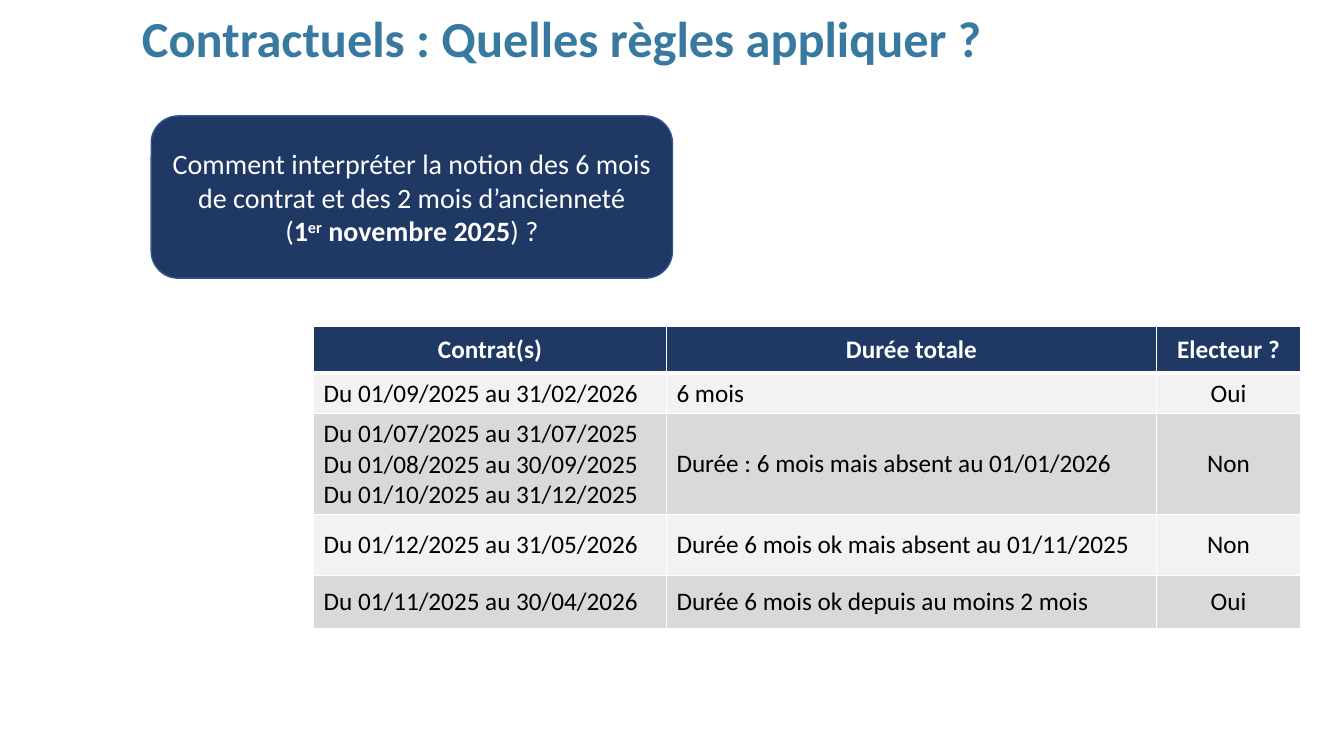
from dataclasses import dataclass

from lxml.etree import SubElement
from pptx import Presentation
from pptx.dml.color import RGBColor
from pptx.enum.shapes import MSO_SHAPE
from pptx.enum.text import MSO_ANCHOR, PP_ALIGN
from pptx.oxml.ns import qn
from pptx.util import Inches, Pt

FONT = "Calibri"
NAVY = "203864"
WHITE = "FFFFFF"
BLACK = "000000"
LIGHT = "F2F2F2"
GRAY = "D9D9D9"


@dataclass
class ContractRow:
    contracts: str
    duration: str
    voter: str
    height: float
    duration_anchor: MSO_ANCHOR = MSO_ANCHOR.MIDDLE


HEADER = ContractRow("Contrat(s)", "Durée totale", "Electeur ?", 0.46)
ROWS = [
    ContractRow("Du 01/09/2025 au 31/02/2026", "6 mois", "Oui", 0.37, MSO_ANCHOR.TOP),
    ContractRow(
        "Du 01/07/2025 au 31/07/2025\nDu 01/08/2025 au 30/09/2025\nDu 01/10/2025 au 31/12/2025",
        "Durée : 6 mois mais absent au 01/01/2026", "Non", 0.99),
    ContractRow("Du 01/12/2025 au 31/05/2026",
                "Durée 6 mois ok mais absent au 01/11/2025", "Non", 0.61),
    ContractRow("Du 01/11/2025 au 30/04/2026",
                "Durée 6 mois ok depuis au moins 2 mois", "Oui", 0.53),
]
COLUMN_WIDTHS = [3.5, 4.86, 1.43]


def rgb(color: str) -> RGBColor:
    return RGBColor.from_string(color)


def add_run(p, text: str, *, size: float, color: str, bold: bool = False,
            baseline: int = 0) -> None:
    r = p.add_run()
    r.text = text
    r.font.name = FONT
    r.font.size = Pt(size)
    r.font.bold = bold
    r.font.color.rgb = rgb(color)
    if baseline:
        r.font._element.set("baseline", str(baseline * 1000))


def add_text(tf, text: str, *, align: PP_ALIGN = PP_ALIGN.LEFT,
             anchor: MSO_ANCHOR = MSO_ANCHOR.MIDDLE, **run_format) -> None:
    tf.word_wrap = True
    tf.vertical_anchor = anchor
    for i, line in enumerate(text.split("\n")):
        p = tf.add_paragraph() if i else tf.paragraphs[0]
        p.alignment = align
        add_run(p, line, **run_format)


def set_borders(cell, bottom: float) -> None:
    tc_pr = cell._tc.get_or_add_tcPr()
    for i, (side, width) in enumerate(zip("LRTB", (1, 1, 1, bottom))):
        ln = SubElement(tc_pr, qn(f"a:ln{side}"), w=str(Pt(width)))
        fill = SubElement(ln, qn("a:solidFill"))
        SubElement(fill, qn("a:srgbClr"), val=WHITE)
        tc_pr.insert(i, ln)


def add_title(s) -> None:
    sp = s.shapes.add_textbox(Inches(1.31), Inches(0), Inches(10.45), Inches(0.82))
    add_text(sp.text_frame, "Contractuels : Quelles règles appliquer ?",
             size=36, color="3879A0", bold=True)
    sp.text_frame.paragraphs[0].line_spacing = 0.9


def add_question(s) -> None:
    sp = s.shapes.add_shape(MSO_SHAPE.ROUNDED_RECTANGLE, Inches(1.5), Inches(1.15),
                            Inches(5.17), Inches(1.61))
    sp.shadow.inherit = False
    sp.fill.solid()
    sp.fill.fore_color.rgb = rgb(NAVY)
    sp.line.color.rgb = rgb("325491")
    sp.line.width = Pt(1)
    add_text(sp.text_frame,
             "Comment interpréter la notion des 6 mois de contrat et des 2 mois d’ancienneté",
             align=PP_ALIGN.CENTER, size=20, color=WHITE)
    p = sp.text_frame.add_paragraph()
    p.alignment = PP_ALIGN.CENTER
    for text, bold, baseline in [("(", False, 0), ("1", True, 0), ("er", True, 30),
                                 (" novembre 2025", True, 0), (") ?", False, 0)]:
        add_run(p, text, size=20, color=WHITE, bold=bold, baseline=baseline)


def add_contracts(s) -> None:
    rows = [HEADER, *ROWS]
    table = s.shapes.add_table(
        len(rows), len(COLUMN_WIDTHS), Inches(3.11), Inches(3.24),
        Inches(sum(COLUMN_WIDTHS)), Inches(sum(row.height for row in rows))).table
    for column, width in zip(table.columns, COLUMN_WIDTHS):
        column.width = Inches(width)
    for i, row in enumerate(rows):
        table.rows[i].height = Inches(row.height)
        is_header = i == 0
        fill = NAVY if is_header else (LIGHT if i % 2 else GRAY)
        for j, text in enumerate((row.contracts, row.duration, row.voter)):
            cell = table.cell(i, j)
            cell.fill.solid()
            cell.fill.fore_color.rgb = rgb(fill)
            set_borders(cell, bottom=3 if is_header else 1)
            add_text(cell.text_frame, text, size=18, bold=is_header,
                     color=WHITE if is_header else BLACK,
                     align=PP_ALIGN.CENTER if is_header or j == 2 else PP_ALIGN.LEFT)
            cell.vertical_anchor = row.duration_anchor if j == 1 else MSO_ANCHOR.MIDDLE


def main() -> None:
    prs = Presentation()
    prs.slide_width = Inches(13.33)
    prs.slide_height = Inches(7.5)
    s = prs.slides.add_slide(prs.slide_layouts[6])
    add_title(s)
    add_contracts(s)
    add_question(s)
    prs.save("out.pptx")


if __name__ == "__main__":
    main()
